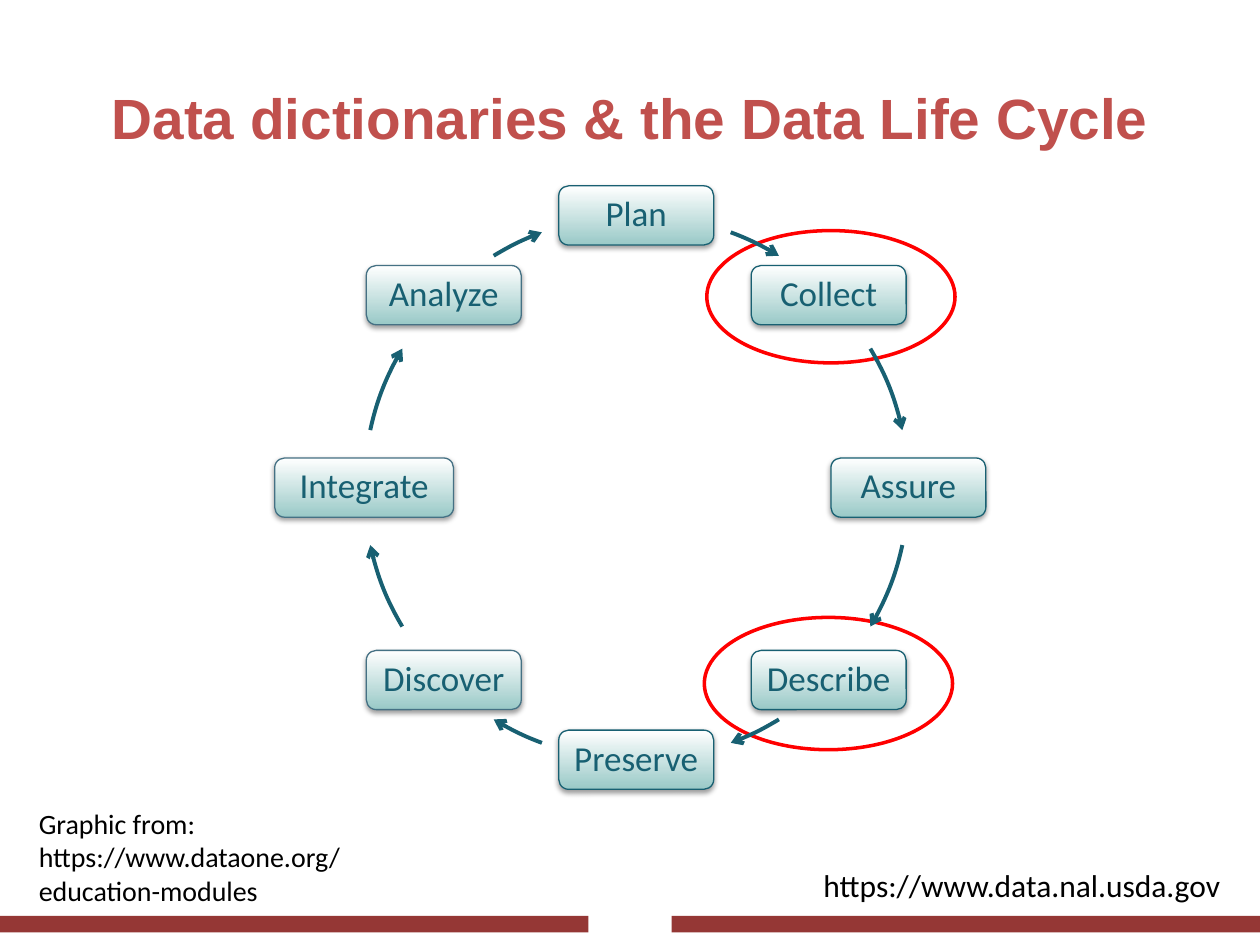
from math import cos, radians, sin

from lxml.etree import SubElement
from pptx import Presentation
from pptx.dml.color import RGBColor
from pptx.enum.shapes import MSO_SHAPE
from pptx.enum.text import MSO_ANCHOR, MSO_AUTO_SIZE, PP_ALIGN
from pptx.oxml.ns import qn
from pptx.util import Inches, Pt

COLORS = {
    "title": "C0504D",
    "bar": "953735",
    "text": "000000",
    "highlight": "FF0000",
    "teal": "186072",
    "slate": "457184",
    "box_top": "FFFFFF",
    "box_bottom": "99C9C7",
}

# Ring of stages, clockwise from the top
CENTER_X, CENTER_Y, RADIUS = 5.05, 3.87, 2.16
BOX_HEIGHT = 0.47
STAGES = [
    ("Plan", 1.23, "teal"),
    ("Collect", 1.23, "teal"),
    ("Assure", 1.23, "teal"),
    ("Describe", 1.23, "teal"),
    ("Preserve", 1.23, "teal"),
    ("Discover", 1.23, "slate"),
    ("Integrate", 1.42, "slate"),
    ("Analyze", 1.23, "slate"),
]
# Arrow spans of the right half, in degrees from the top; the left half is 180 on
ARROW_SPANS = [(20.3, 31.6), (59.3, 77.8), (102.2, 120.7), (148.4, 159.7)]


def rgb(name):
    return RGBColor.from_string(COLORS[name])


class CycleSlide:
    def __init__(self, slide):
        self.slide = slide

    def style(self, paragraph, size, color, font="Calibri", align=PP_ALIGN.LEFT, bold=False):
        paragraph.alignment = align
        for run in paragraph.runs:
            run.font.name = font
            run.font.size = Pt(size)
            run.font.bold = bold
            run.font.color.rgb = rgb(color)

    def shape(self, preset, left, top, width, height, line=None, weight=1):
        shape = self.slide.shapes.add_shape(
            preset, Inches(left), Inches(top), Inches(width), Inches(height))
        shape.shadow.inherit = False
        shape.fill.background()
        if line:
            shape.line.color.rgb = rgb(line)
            shape.line.width = Pt(weight)
        else:
            shape.line.fill.background()
        return shape

    def title(self, text):
        title = self.slide.shapes.title
        title.left, title.top = Inches(0.5), Inches(0.3)
        title.width, title.height = Inches(9), Inches(1.25)
        title.text_frame.text = text
        title.text_frame.vertical_anchor = MSO_ANCHOR.MIDDLE
        self.style(title.text_frame.paragraphs[0], 32.4, "title", "Arial", PP_ALIGN.CENTER, True)

    def bar(self, left):
        bar = self.shape(MSO_SHAPE.RECTANGLE, left, 7.27, 4.67, 0.13)
        bar.fill.solid()
        bar.fill.fore_color.rgb = rgb("bar")

    def note(self, text, left, top, width, height, size, align=PP_ALIGN.LEFT,
             anchor=MSO_ANCHOR.TOP):
        note = self.slide.shapes.add_textbox(
            Inches(left), Inches(top), Inches(width), Inches(height))
        frame = note.text_frame
        frame.word_wrap = True
        frame.auto_size = MSO_AUTO_SIZE.NONE
        frame.vertical_anchor = anchor
        frame.text = text
        for paragraph in frame.paragraphs:
            self.style(paragraph, size, "text", align=align)

    def highlight(self, left, top):
        self.shape(MSO_SHAPE.OVAL, left, top, 1.97, 1.05, "highlight", 2)

    def stage(self, text, angle, width, line):
        x = CENTER_X + RADIUS * sin(radians(angle))
        y = CENTER_Y - RADIUS * cos(radians(angle))
        box = self.shape(MSO_SHAPE.ROUNDED_RECTANGLE, x - width / 2, y - BOX_HEIGHT / 2,
                         width, BOX_HEIGHT, line, 0.75)
        box.fill.gradient()
        box.fill.gradient_angle = 270
        for stop, color in zip(box.fill.gradient_stops, ("box_top", "box_bottom")):
            stop.color.rgb = rgb(color)
        self.drop_shadow(box)
        frame = box.text_frame
        frame.margin_left = frame.margin_right = Inches(0.08)
        frame.margin_top = frame.margin_bottom = Inches(0.08)
        frame.word_wrap = False
        frame.vertical_anchor = MSO_ANCHOR.MIDDLE
        frame.text = text
        frame.paragraphs[0].line_spacing = 0.9
        self.style(frame.paragraphs[0], 20, "teal", align=PP_ALIGN.CENTER)

    def drop_shadow(self, shape):
        effects = shape._element.spPr.find(qn("a:effectLst"))
        shadow = SubElement(effects, qn("a:outerShdw"), blurRad=str(Pt(3.1)),
                            dist=str(Pt(1.6)), dir="5400000", rotWithShape="0")
        black = SubElement(shadow, qn("a:srgbClr"), val="000000")
        SubElement(black, qn("a:alpha"), val="38000")

    def arc_arrow(self, start, end):
        arc = self.shape(MSO_SHAPE.ARC, CENTER_X - RADIUS, CENTER_Y - RADIUS,
                         2 * RADIUS, 2 * RADIUS, "teal", 2.25)
        # Arc angles run clockwise from the right, in 60000ths of a degree
        for index, angle in enumerate((start, end)):
            arc.adjustments[index] = (angle - 90) % 360 * 0.6
        SubElement(arc.line._get_or_add_ln(), qn("a:tailEnd"), type="arrow")


def main():
    prs = Presentation()
    prs.slide_width, prs.slide_height = Inches(10), Inches(7.5)
    cycle = CycleSlide(prs.slides.add_slide(prs.slide_layouts[5]))

    # Title and footer bars
    cycle.title("Data dictionaries & the Data Life Cycle")
    for left in (0, 5.33):
        cycle.bar(left)

    # Source notes
    cycle.note("https://www.data.nal.usda.gov", 6.42, 6.82, 3.38, 0.4, 18,
               PP_ALIGN.CENTER, MSO_ANCHOR.MIDDLE)
    cycle.note("Graphic from: https://www.dataone.org/\neducation-modules",
               0.21, 6.35, 3.87, 0.91, 16)

    # Rings around Describe and Collect
    cycle.highlight(5.59, 4.9)
    cycle.highlight(5.61, 1.83)

    # Stages, each followed by the arrow to the next
    step = 360 / len(STAGES)
    for index, (name, width, line) in enumerate(STAGES):
        cycle.stage(name, index * step, width, line)
        half, position = divmod(index, len(ARROW_SPANS))
        start, end = ARROW_SPANS[position]
        cycle.arc_arrow(start + 180 * half, end + 180 * half)

    prs.save("out.pptx")


if __name__ == "__main__":
    main()
